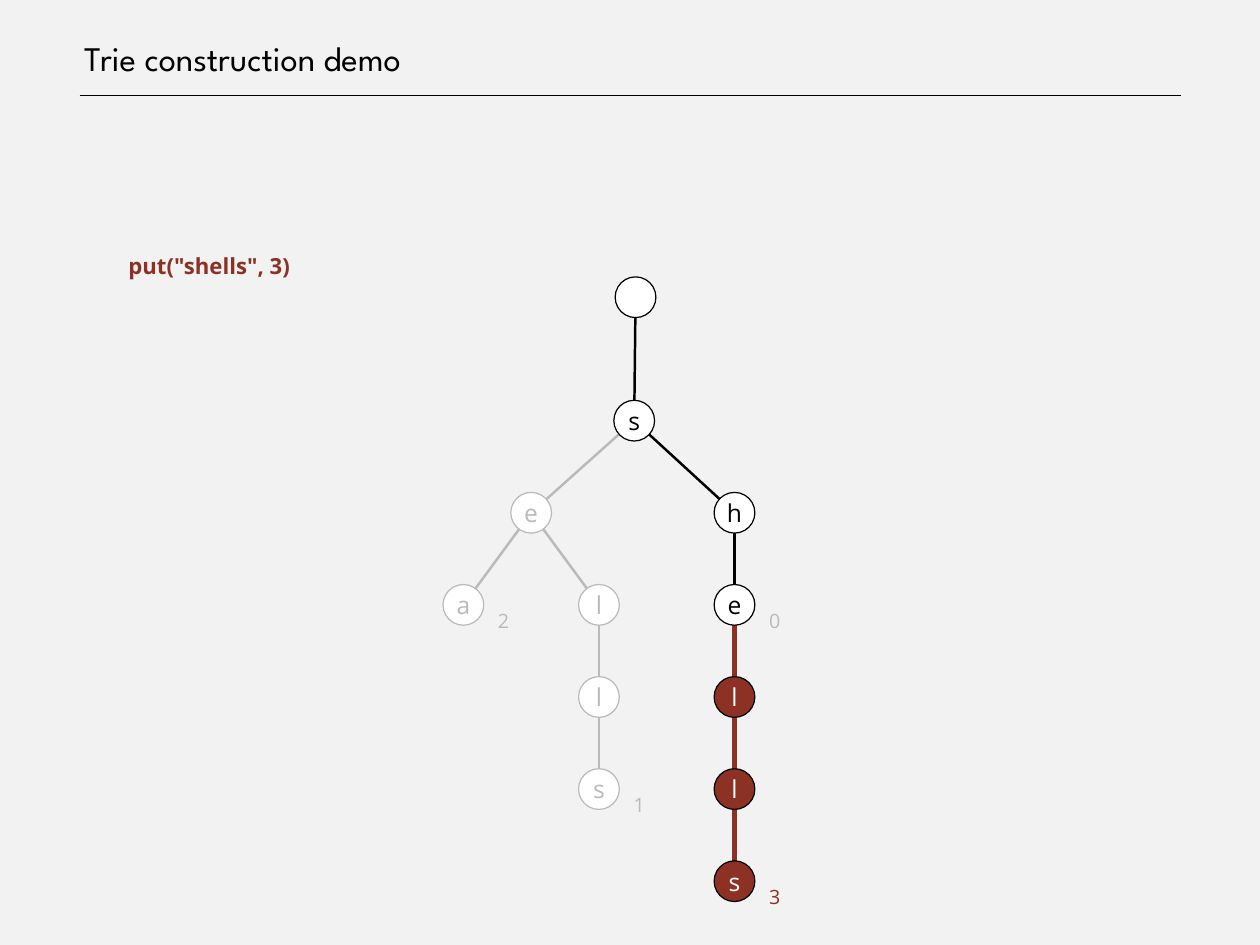
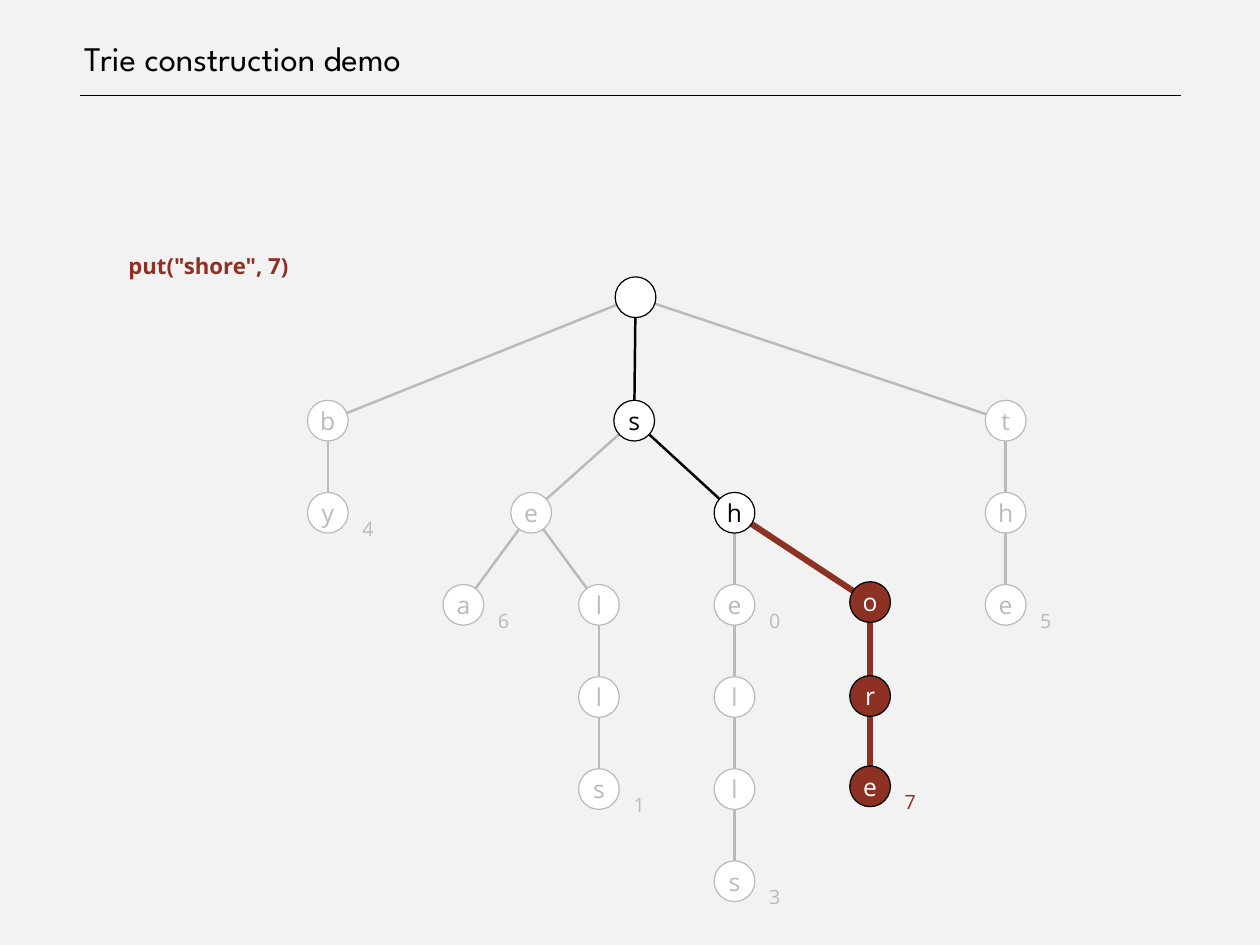
import dataclasses
import typing

import lxml.etree
import pptx
import pptx.dml.color
import pptx.enum.shapes
import pptx.enum.text
import pptx.oxml.ns
import pptx.util

Inches = pptx.util.Inches
Pt = pptx.util.Pt
ANCHOR = pptx.enum.text.MSO_ANCHOR
ALIGN = pptx.enum.text.PP_ALIGN
AUTO = pptx.enum.text.MSO_AUTO_SIZE

BACKGROUND, BLACK, WHITE, GRAY, RED = "F2F2F2", "000000", "FFFFFF", "BABABA", "8D3124"
HEAD_FONT, BODY_FONT = "League Spartan", "Open Sans"
DIAMETER = 0.46
LEFT, TOP, COL_STEP, ROW_STEP = 3.47, 4.52, 1.53, 1.04

GRID = {
    "": (2.27, -1.34), "s": (2.26, 0), "b": (0, 0), "by": (0, 1),
    "se": (1.5, 1), "sea": (1, 2), "sel": (2, 2), "sell": (2, 3), "sells": (2, 4),
    "sh": (3, 1), "she": (3, 2), "shel": (3, 3), "shell": (3, 4), "shells": (3, 5),
    "sho": (4, 1.97), "shor": (4, 2.99), "shore": (4, 3.97),
    "t": (5, 0), "th": (5, 1), "the": (5, 2),
}


@dataclasses.dataclass(frozen=True)
class Look:
    fill: str
    outline: str
    letter: str
    edge: str
    value: str


@dataclasses.dataclass(frozen=True)
class Step:
    word: str
    value: int
    stored: dict[str, int]
    new_edge: float


IDLE = Look(WHITE, GRAY, GRAY, GRAY, GRAY)
VISITED = Look(WHITE, BLACK, BLACK, BLACK, GRAY)
ADDED = Look(RED, BLACK, WHITE, RED, RED)

STEPS = [
    Step("shells", 3, {"she": 0, "sells": 1, "sea": 2}, 4),
    Step("shore", 7, {"she": 0, "sells": 1, "sea": 6, "shells": 3, "by": 4, "the": 5}, 5),
]


def rgb(color: str) -> pptx.dml.color.RGBColor:
    return pptx.dml.color.RGBColor.from_string(color)


def apply(target: typing.Any, values: dict[str, typing.Any]) -> None:
    for name, value in values.items():
        setattr(target, name, value)


def write(shape, text: str, font: str, size: float, color: str, frame: dict,
          para: dict, bold: bool = False) -> None:
    tf = shape.text_frame
    margins = dict.fromkeys(("margin_left", "margin_top", "margin_right", "margin_bottom"), 0)
    apply(tf, margins | frame)
    p = tf.paragraphs[0]
    apply(p, para)
    r = p.add_run()
    apply(r, {"text": text})
    apply(r.font, {"name": font, "size": Pt(size), "bold": bold})
    r.font.color.rgb = rgb(color)


def add_line(s, start: tuple, end: tuple, color: str, width: float):
    line = s.shapes.add_connector(pptx.enum.shapes.MSO_CONNECTOR.STRAIGHT,
                                  *map(Inches, start + end))
    line.line.color.rgb = rgb(color)
    line.line.width = Pt(width)
    lxml.etree.SubElement(line._element.spPr, pptx.oxml.ns.qn("a:effectLst"))
    return line


def add_label(s, text: str, box: tuple, size: float, color: str, bold: bool = False) -> None:
    label = s.shapes.add_textbox(*map(Inches, box))
    inset = Inches(0.06)
    frame = {"margin_left": Inches(0.12), "margin_top": inset, "margin_right": inset,
             "margin_bottom": inset, "word_wrap": False, "auto_size": AUTO.SHAPE_TO_FIT_TEXT}
    write(label, text, BODY_FONT, size, color, frame, {"line_spacing": 1.5}, bold)


def corner(key: str) -> tuple[float, float]:
    col, row = GRID[key]
    return LEFT + col * COL_STEP, TOP + row * ROW_STEP


def center(key: str) -> tuple[float, float]:
    x, y = corner(key)
    return x + DIAMETER / 2, y + DIAMETER / 2


def prefixes(word: str) -> list[str]:
    return [word[:n] for n in range(len(word) + 1)]


def add_node(s, key: str, look: Look) -> None:
    node = s.shapes.add_shape(pptx.enum.shapes.MSO_SHAPE.OVAL,
                              *map(Inches, (*corner(key), DIAMETER, DIAMETER)))
    node.shadow.inherit = False
    node.fill.solid()
    node.fill.fore_color.rgb = rgb(look.fill)
    node.line.color.rgb = rgb(look.outline)
    node.line.width = Pt(1)
    if key:
        write(node, key[-1], BODY_FONT, 20, look.letter,
              {"vertical_anchor": ANCHOR.MIDDLE, "word_wrap": True}, {"alignment": ALIGN.CENTER})


def add_trie(s, step: Step) -> None:
    old = {key for word in step.stored for key in prefixes(word)}
    route = prefixes(step.word)
    looks = {key: IDLE for key in GRID if key in old}
    looks |= {key: VISITED if key in old else ADDED for key in route}
    for key, look in looks.items():
        if key:
            width = step.new_edge if look is ADDED else 2
            add_line(s, center(key), center(key[:-1]), look.edge, width)
    for key, look in looks.items():
        add_node(s, key, look)
    for word, value in (step.stored | {step.word: step.value}).items():
        x, y = corner(word)
        add_label(s, str(value), (x + 0.5, y + 0.08, 0.33, 0.38), 16, looks[word].value)


def add_title(s, text: str) -> None:
    write(s.shapes.title, text, HEAD_FONT, 28, BLACK,
          {"margin_left": Inches(0.06), "vertical_anchor": ANCHOR.BOTTOM,
           "word_wrap": True, "auto_size": AUTO.NONE}, {"alignment": ALIGN.LEFT})


def style_template(prs, layout) -> None:
    fill = prs.slide_master.background.fill
    fill.solid()
    fill.fore_color.rgb = rgb(BACKGROUND)
    apply(layout.placeholders[0], {"left": Inches(0.89), "top": Inches(0),
                                   "width": Inches(12.44), "height": Inches(0.89)})


def main() -> None:
    prs = pptx.Presentation()
    apply(prs, {"slide_width": Inches(14.22), "slide_height": Inches(10.67)})
    layout = prs.slide_layouts[5]
    style_template(prs, layout)
    for step in STEPS:
        s = prs.slides.add_slide(layout)
        add_title(s, "Trie construction demo")
        add_label(s, f'put("{step.word}", {step.value})', (1.33, 2.64, 2.1, 0.4), 18, RED, True)
        add_trie(s, step)
    rule = add_line(prs.slides[0], (0.9, 1.08), (13.33, 1.08), BLACK, 1)
    layout.shapes._spTree.append(rule._element)
    prs.save("out.pptx")


if __name__ == "__main__":
    main()
